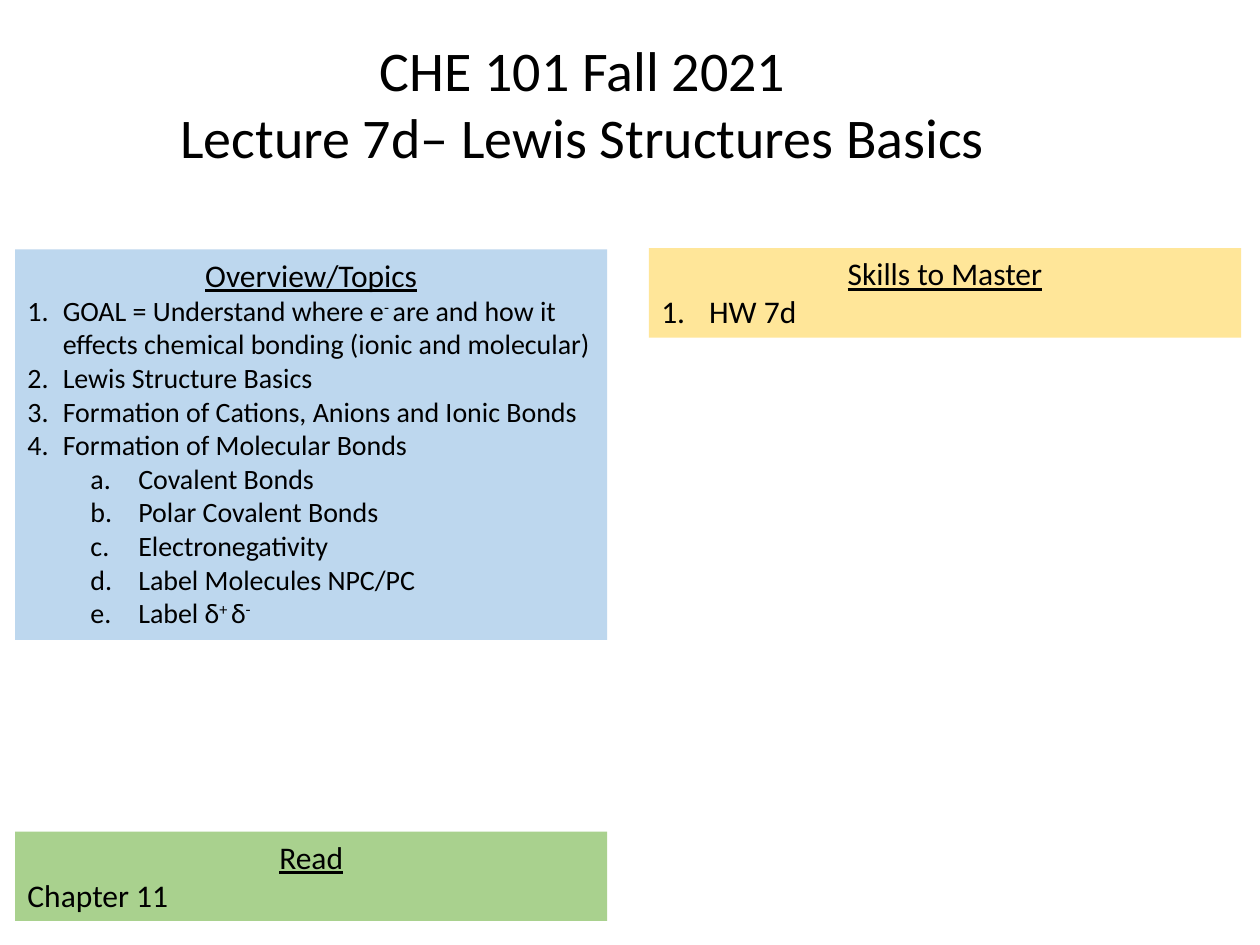
"""Build the lecture opening slide: a title above three coloured panels."""
import pptx
import pptx.util
import pptx.dml.color
import pptx.enum.shapes
import pptx.enum.text
import lxml.etree

THEME = {
    "font": "Calibri", "text": "000000",
    "blue": "BDD7EE", "yellow": "FFE699", "green": "A9D18E",
    "title": 32, "body": 18, "small": 16,
}
ALIGN = pptx.enum.text.PP_ALIGN
color = pptx.dml.color.RGBColor.from_string

deck = pptx.Presentation()
deck.slide_width = pptx.util.Inches(10)
deck.slide_height = pptx.util.Inches(7.5)
page = deck.slides.add_slide(deck.slide_layouts[6])
column = deck.slide_width / 100
row = deck.slide_height / 75


def write(box, text, size=THEME["body"], align=ALIGN.LEFT, underline=False,
          numbering=None, level=0, indent=0, hanging=0):
    """Add one paragraph; text between carets is superscript."""
    frame = box.text_frame
    para = frame.add_paragraph() if frame.text else frame.paragraphs[0]
    para.alignment = align
    para.level = level
    if numbering:
        properties = para._p.get_or_add_pPr()
        properties.set("marL", str(pptx.util.Inches(indent)))
        properties.set("indent", str(-pptx.util.Inches(hanging)))
        bullet_font = lxml.etree.SubElement(properties, pptx.oxml.ns.qn("a:buFont"))
        bullet_font.set("typeface", "+mj-lt")
        bullet = lxml.etree.SubElement(properties, pptx.oxml.ns.qn("a:buAutoNum"))
        bullet.set("type", numbering)
    for index, part in enumerate(text.split("^")):
        if part:
            span = para.add_run()
            span.text = part
            span.font.name = THEME["font"]
            span.font.size = pptx.util.Pt(size)
            span.font.color.rgb = color(THEME["text"])
            span.font.underline = underline
            if index % 2:
                span.font._element.set("baseline", "30000")


topic = {"size": THEME["small"], "numbering": "arabicPeriod", "indent": 0.28, "hanging": 0.28}
subtopic = {"size": THEME["small"], "numbering": "alphaLcPeriod", "level": 1,
            "indent": 0.88, "hanging": 0.38}
skill = {"numbering": "arabicPeriod", "indent": 0.38, "hanging": 0.38}

panels = [
    ("Overview/Topics", "blue", 1.2, 19.8, 31, [
        ("GOAL = Understand where e^- ^are and how it effects chemical bonding "
         "(ionic and molecular)", topic),
        ("Lewis Structure Basics", topic),
        ("Formation of Cations, Anions and Ionic Bonds", topic),
        ("Formation of Molecular Bonds", topic),
        ("Covalent Bonds", subtopic),
        ("Polar Covalent Bonds", subtopic),
        ("Electronegativity", subtopic),
        ("Label Molecules NPC/PC", subtopic),
        ("Label δ^+ ^δ^-^", subtopic),
    ]),
    ("Skills to Master", "yellow", 51.5, 19.7, 7.1, [("HW 7d", skill)]),
    ("Read", "green", 1.2, 66, 7.1, [("Chapter 11", {})]),
]

for heading, fill, left, top, height, lines in panels:
    panel = page.shapes.add_shape(
        pptx.enum.shapes.MSO_SHAPE.RECTANGLE,
        round(left * column), round(top * row), round(47 * column), round(height * row))
    panel.shadow.inherit = False
    panel.fill.solid()
    panel.fill.fore_color.rgb = color(THEME[fill])
    panel.line.fill.background()
    panel.text_frame.word_wrap = True
    panel.text_frame.vertical_anchor = pptx.enum.text.MSO_ANCHOR.TOP
    panel.text_frame.auto_size = pptx.enum.text.MSO_AUTO_SIZE.SHAPE_TO_FIT_TEXT
    write(panel, heading, align=ALIGN.CENTER, underline=True)
    for text, style in lines:
        write(panel, text, **style)

title = page.shapes.add_textbox(
    round(13 * column), round(2.3 * row), round(66.5 * column), round(11.8 * row))
title.text_frame.word_wrap = False
title.text_frame.auto_size = pptx.enum.text.MSO_AUTO_SIZE.SHAPE_TO_FIT_TEXT
for text in ("CHE 101 Fall 2021", "Lecture 7d– Lewis Structures Basics"):
    write(title, text, size=THEME["title"], align=ALIGN.CENTER)

deck.save("out.pptx")
